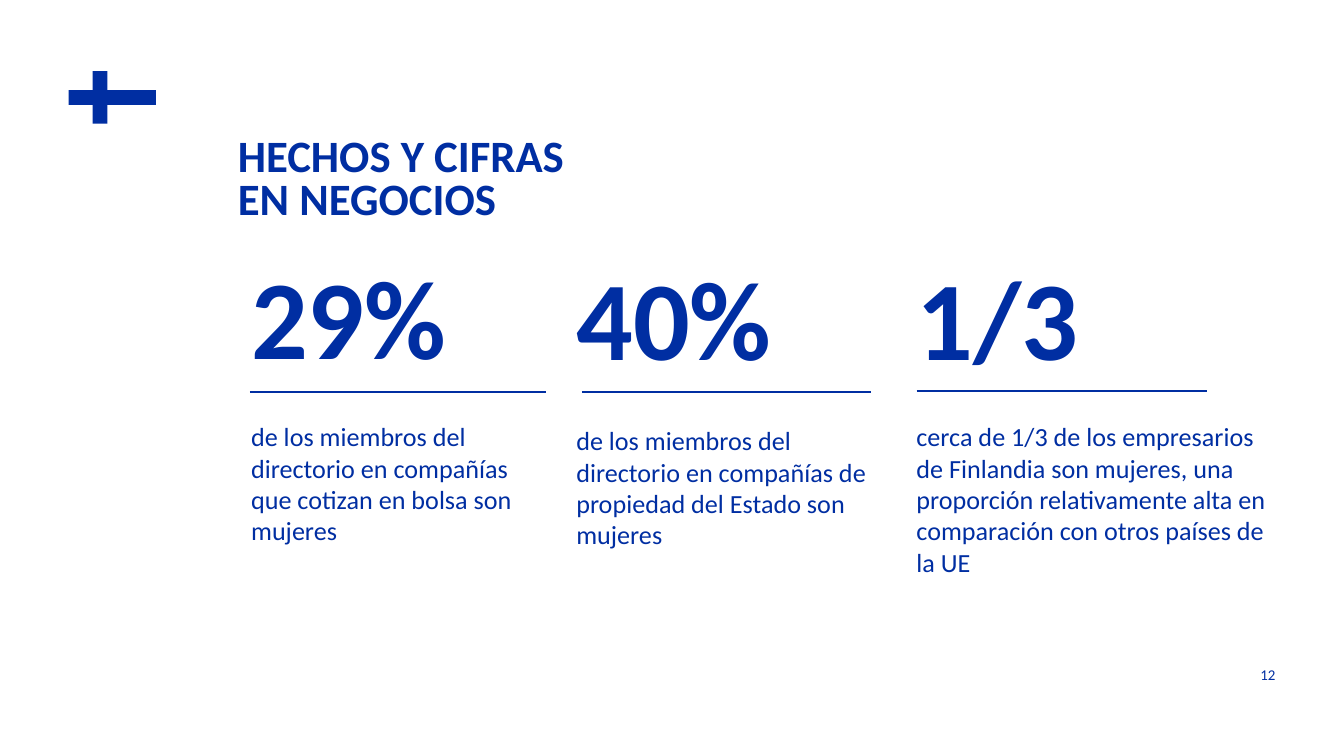
"""Build a slide of three key figures about women in Finnish business."""
from lxml.etree import SubElement
from pptx import Presentation
from pptx.dml.color import RGBColor
from pptx.enum.shapes import MSO_CONNECTOR
from pptx.enum.text import MSO_ANCHOR as ANCHOR, MSO_AUTO_SIZE as FIT, PP_ALIGN as ALIGN
from pptx.oxml.ns import qn
from pptx.util import Inches, Pt

BLUE = RGBColor(0x00, 0x2E, 0xA2)
FONT = "Calibri"

CROSS = [(0.69, 0.53), (0.69, 0.67), (0.51, 0.67), (0.51, 0.78), (0.69, 0.78), (0.69, 0.92),
         (0.8, 0.92), (0.8, 0.78), (1.16, 0.78), (1.16, 0.67), (0.8, 0.67), (0.8, 0.53)]

FIGURES = [
    ("29%", "de los miembros del directorio en compañías \vque cotizan en bolsa son mujeres",
     (1.77, 1.79, 2.05, 1.11), (1.77, 3.08, 2.29, 1.04), (1.86, 4.06, 2.92)),
    ("40%", "de los miembros del directorio en compañías de propiedad del Estado son mujeres",
     (4.19, 1.8, 1.95, 1.11), (4.19, 3.11, 2.43, 1.04), (4.33, 6.48, 2.92)),
    ("1/3", "cerca de 1/3 de los empresarios de Finlandia son mujeres, una proporción "
            "relativamente alta en comparación con otros países de la UE",
     (6.72, 1.8, 1.73, 1.11), (6.72, 3.08, 2.81, 1.28), (6.82, 8.98, 2.91)),
]


def set_text(tf, text, size, bold=False, align=ALIGN.LEFT):
    """Fill a text frame with one styled paragraph and return it."""
    tf.text = text
    tf.word_wrap = True
    p = tf.paragraphs[0]
    p.alignment = align
    p.font.name = FONT
    p.font.size = Pt(size)
    p.font.bold = bold
    p.font.color.rgb = BLUE
    return p


def clear_margins(tf):
    """Remove the inner margins of a text frame."""
    tf.margin_left = tf.margin_top = tf.margin_right = tf.margin_bottom = 0


def add_text(s, box, text, size, bold=False, align=ALIGN.LEFT):
    """Add a text box and return its text frame."""
    tf = s.shapes.add_textbox(*map(Inches, box)).text_frame
    set_text(tf, text, size, bold, align)
    return tf


def add_title(s, box, text):
    """Place and style the title placeholder."""
    sp = s.shapes.title
    sp.left, sp.top, sp.width, sp.height = map(Inches, box)
    tf = sp.text_frame
    set_text(tf, text, 24, bold=True).line_spacing = 0.8
    clear_margins(tf)
    tf.auto_size = FIT.NONE
    tf.vertical_anchor = ANCHOR.TOP


def add_rule(s, x1, x2, y):
    """Add a thin horizontal line."""
    line = s.shapes.add_connector(MSO_CONNECTOR.STRAIGHT, *map(Inches, (x1, y, x2, y)))
    line.line.color.rgb = BLUE
    line.line.width = Pt(1)
    SubElement(line._element.spPr, qn("a:effectLst"))


def add_outline(s, points):
    """Add a closed blue outline through the given points."""
    start, *rest = [(Inches(x), Inches(y)) for x, y in points]
    builder = s.shapes.build_freeform(*start)
    builder.add_line_segments(rest, close=True)
    sp = builder.convert_to_shape()
    sp.fill.solid()
    sp.fill.fore_color.rgb = BLUE
    sp.line.fill.background()
    sp.shadow.inherit = False


def add_figure(s, value, caption, value_box, caption_box, rule):
    """Add a large value, the line under it and its caption."""
    add_text(s, value_box, value, 60, bold=True)
    add_rule(s, *rule)
    add_text(s, caption_box, caption, 14)


def add_page_number(s, box, number):
    """Add the page number at the lower right."""
    tf = add_text(s, box, number, 8, align=ALIGN.RIGHT)
    clear_margins(tf)
    tf.vertical_anchor = ANCHOR.MIDDLE


def main():
    """Create the slide and save it."""
    prs = Presentation()
    prs.slide_width = Inches(10)
    prs.slide_height = prs.slide_width * 9 // 16
    s = prs.slides.add_slide(prs.slide_layouts[5])
    add_outline(s, CROSS)
    add_title(s, (1.77, 1.03, 3.83, 0.73), "HECHOS Y CIFRAS\vEN NEGOCIOS")
    for figure in FIGURES:
        add_figure(s, *figure)
    add_page_number(s, (8.7, 4.94, 0.79, 0.16), "12")
    prs.save("out.pptx")


if __name__ == "__main__":
    main()
